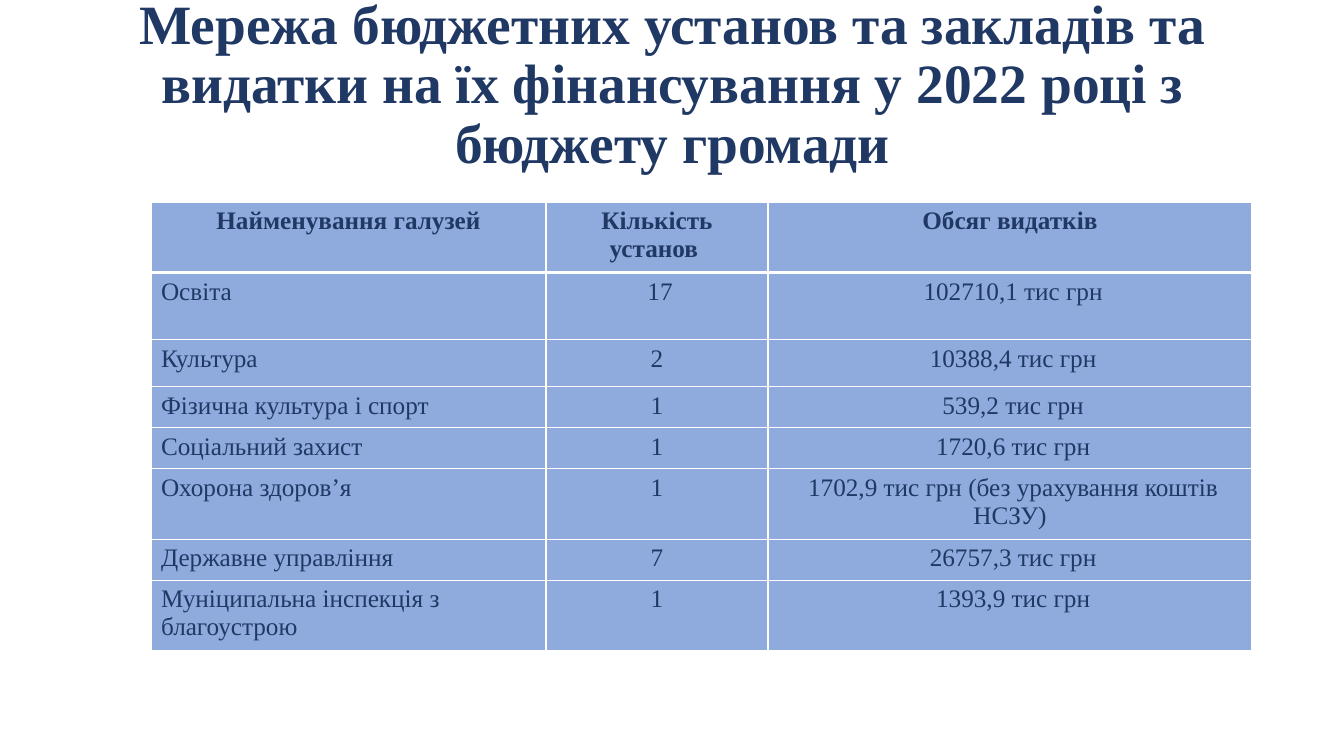
"""Build the slide on budget institutions and their 2022 funding."""
from lxml import etree
from pptx import Presentation
from pptx.dml.color import RGBColor
from pptx.enum.text import MSO_ANCHOR, PP_ALIGN
from pptx.oxml.ns import qn
from pptx.util import Emu, Pt

TITLE = ("Мережа бюджетних установ та закладів та видатки на їх фінансування "
         "у 2022 році з бюджету громади")
ROWS = [
    ("Найменування галузей", "Кількість установ ", "Обсяг видатків"),
    ("Освіта", " 17", " 102710,1 тис грн"),
    ("Культура", "2", " 10388,4 тис грн"),
    ("Фізична культура і спорт", "1", " 539,2 тис грн"),
    ("Соціальний захист", "1", " 1720,6 тис грн"),
    ("Охорона здоров’я", "1", " 1702,9 тис грн (без урахування коштів НСЗУ)"),
    ("Державне управління", "7", " 26757,3 тис грн"),
    ("Муніципальна інспекція з благоустрою", "1", " 1393,9 тис грн"),
]
SLIDE_SIZE = (1344, 756)
TITLE_BOX = (93, 40, 1159, 146)
TITLE_BOTTOM_MARGIN = 59
TABLE_CORNER = (151, 202)
COLUMN_WIDTHS = (395, 222, 484)
ROW_HEIGHTS = (64, 67, 47, 41, 41, 66, 41, 66)

NAVY = RGBColor(0x20, 0x38, 0x64)
PALE_BLUE = RGBColor(0x8F, 0xAA, 0xDC)
WHITE = RGBColor(0xFF, 0xFF, 0xFF)
FONT = "Times New Roman"


def px(length):
    """Turn pixels into EMU."""
    return Emu(round(length * 914400 / 100.8))


def write(paragraph, text, size, bold, alignment):
    """Put one formatted run into a paragraph."""
    paragraph.alignment = alignment
    run = paragraph.add_run()
    run.text = text
    for name, value in {"name": FONT, "size": Pt(size), "bold": bold}.items():
        setattr(run.font, name, value)
    run.font.color.rgb = NAVY


def add_borders(cell, widths):
    """Draw white cell borders with widths in points, keyed by side."""
    properties = cell._tc.get_or_add_tcPr()
    for index, (side, width) in enumerate(widths.items()):
        line = etree.Element(qn(f"a:ln{side}"), w=str(Pt(width)))
        fill = etree.SubElement(line, qn("a:solidFill"))
        etree.SubElement(fill, qn("a:srgbClr"), val=str(WHITE))
        properties.insert(index, line)


def add_title(slide):
    """Add the centred heading."""
    frame = slide.shapes.add_textbox(*map(px, TITLE_BOX)).text_frame
    settings = {"word_wrap": True, "vertical_anchor": MSO_ANCHOR.MIDDLE,
                "margin_bottom": px(TITLE_BOTTOM_MARGIN)}
    for name, value in settings.items():
        setattr(frame, name, value)
    paragraph = frame.paragraphs[0]
    paragraph.line_spacing = 0.9
    write(paragraph, TITLE, 39.6, True, PP_ALIGN.CENTER)


def add_funding_table(slide):
    """Add the table of sectors, institutions and spending."""
    size = (sum(COLUMN_WIDTHS), sum(ROW_HEIGHTS))
    table = slide.shapes.add_table(
        len(ROWS), len(COLUMN_WIDTHS), *map(px, TABLE_CORNER + size)).table
    for column, width in zip(table.columns, COLUMN_WIDTHS):
        column.width = px(width)
    for row, height in zip(table.rows, ROW_HEIGHTS):
        row.height = px(height)
    for row_index, texts in enumerate(ROWS):
        header = row_index == 0
        for column_index, text in enumerate(texts):
            cell = table.cell(row_index, column_index)
            cell.fill.solid()
            cell.fill.fore_color.rgb = PALE_BLUE
            add_borders(cell, {"L": 1, "R": 1, "T": 3 if row_index == 1 else 1,
                               "B": 3 if header else 1})
            centred = header or column_index > 0
            write(cell.text_frame.paragraphs[0], text, 18, header,
                  PP_ALIGN.CENTER if centred else PP_ALIGN.LEFT)


def main():
    """Create and save the presentation."""
    presentation = Presentation()
    presentation.slide_width, presentation.slide_height = map(px, SLIDE_SIZE)
    slide = presentation.slides.add_slide(presentation.slide_layouts[6])
    add_title(slide)
    add_funding_table(slide)
    presentation.save("out.pptx")


if __name__ == "__main__":
    main()
